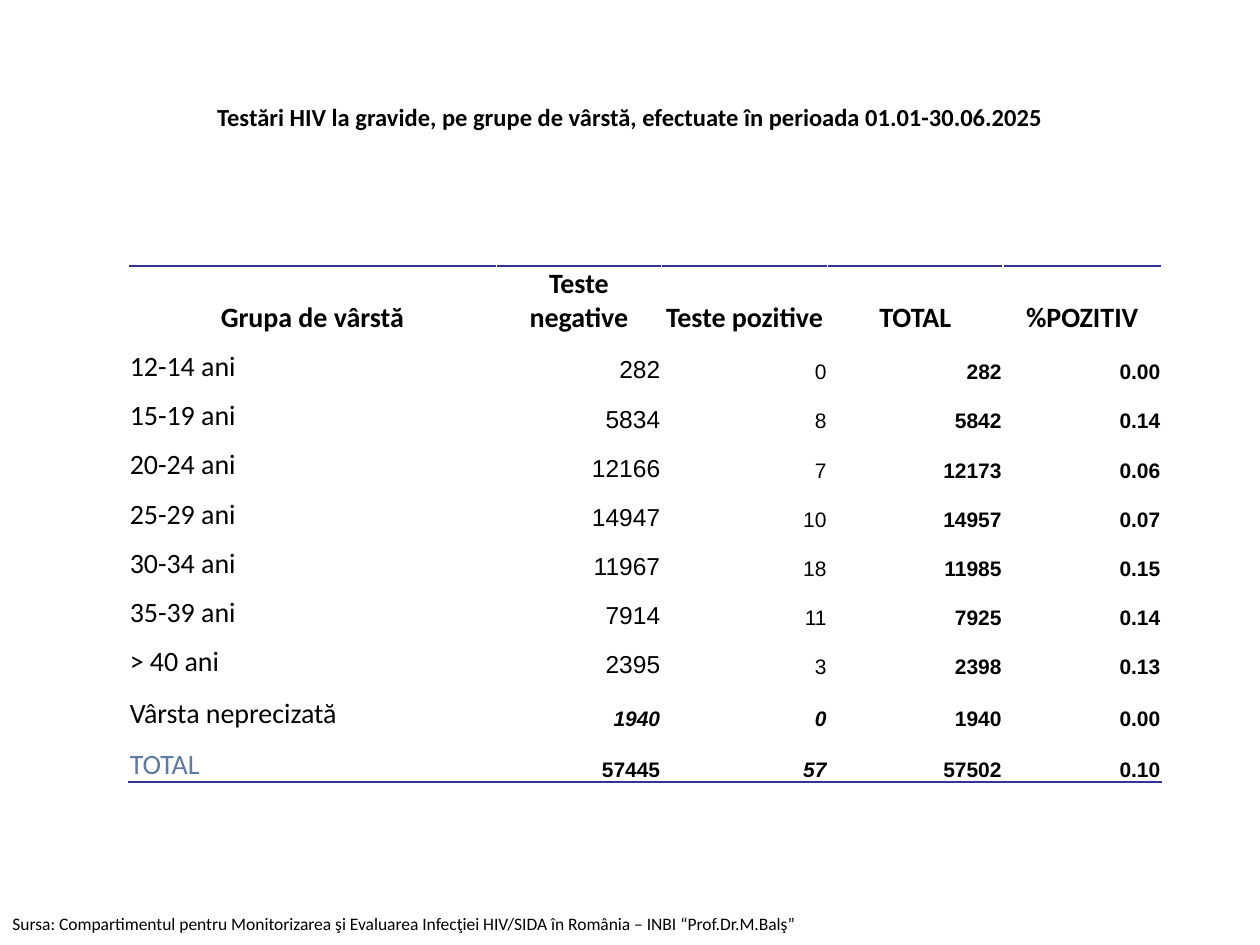
from pptx import Presentation
from pptx.dml.color import RGBColor
from pptx.enum.text import MSO_ANCHOR, PP_ALIGN
from pptx.oxml import parse_xml
from pptx.oxml.ns import nsdecls
from pptx.util import Inches, Pt

COLORS = {"text": "000000", "total": "5E7AA2", "rule": "333399"}

presentation = Presentation()
presentation.slide_width = Inches(10)
presentation.slide_height = Inches(7.5)
slide = presentation.slides.add_slide(presentation.slide_layouts[6])
unit = presentation.slide_width / 100


def write(frame, text, size, font="Calibri", color="text", bold=False, italic=False,
          align=PP_ALIGN.LEFT):
    paragraph = frame.paragraphs[0]
    paragraph.alignment = align
    run = paragraph.add_run()
    run.text = text
    run.font.size = Pt(size)
    run.font.name = font
    run.font.bold = bold
    run.font.italic = italic
    run.font.color.rgb = RGBColor.from_string(COLORS[color])


def add_rule(cell, side):
    cell._tc.get_or_add_tcPr().insert(0, parse_xml(
        f'<a:{side} {nsdecls("a")} w="{Pt(1)}"><a:solidFill>'
        f'<a:srgbClr val="{COLORS["rule"]}"/></a:solidFill></a:{side}>'))


source = slide.shapes.add_textbox(0, int(72 * unit), int(67.1 * unit), int(2.7 * unit))
source.text_frame.word_wrap = False
write(source.text_frame,
      "Sursa: Compartimentul pentru Monitorizarea şi Evaluarea Infecţiei HIV/SIDA în România"
      " – INBI “Prof.Dr.M.Balş”", size=10)

title = slide.shapes.add_textbox(int(5 * unit), int(3 * unit), int(90 * unit), int(12.5 * unit))
title.text_frame.word_wrap = True
title.text_frame.vertical_anchor = MSO_ANCHOR.MIDDLE
write(title.text_frame,
      "Testări HIV la gravide, pe grupe de vârstă, efectuate în perioada 01.01-30.06.2025",
      size=14, bold=True, align=PP_ALIGN.CENTER)

headings = ["Grupa de vârstă", "Teste negative", "Teste pozitive", "TOTAL", "%POZITIV"]
tests = [
    ("12-14 ani", 282, 0),
    ("15-19 ani", 5834, 8),
    ("20-24 ani", 12166, 7),
    ("25-29 ani", 14947, 10),
    ("30-34 ani", 11967, 18),
    ("35-39 ani", 7914, 11),
    ("> 40 ani", 2395, 3),
    ("Vârsta neprecizată", 1940, 0),
]
tests.append(("TOTAL", sum(row[1] for row in tests), sum(row[2] for row in tests)))
rows = [headings]
for group, negative, positive in tests:
    total = negative + positive
    rows.append([group, str(negative), str(positive), str(total), f"{100 * positive / total:.2f}"])

column_widths = [29.2, 13.1, 13.2, 13.9, 12.6]
row_heights = [5.5] + [3.9] * 7 + [4.1] * 2
last = len(rows) - 1
unspecified = last - 1

table = slide.shapes.add_table(
    len(rows), len(headings), int(10.2 * unit), int(21.1 * unit),
    int(sum(column_widths) * unit), int(sum(row_heights) * unit)).table
table.first_row = False
table.horz_banding = False
for column, width in zip(table.columns, column_widths):
    column.width = int(width * unit)
for row, height in zip(table.rows, row_heights):
    row.height = int(height * unit)

for row_index, values in enumerate(rows):
    for column_index, value in enumerate(values):
        cell = table.cell(row_index, column_index)
        cell.fill.background()
        cell.vertical_anchor = MSO_ANCHOR.BOTTOM
        cell.margin_left = cell.margin_right = cell.margin_top = Inches(0.01)
        cell.margin_bottom = 0
        if row_index == 0:
            add_rule(cell, "lnT")
            write(cell.text_frame, value, size=16, bold=True, align=PP_ALIGN.CENTER)
            continue
        if row_index == last:
            add_rule(cell, "lnB")
        if column_index == 0:
            write(cell.text_frame, value, size=16,
                  color="total" if row_index == last else "text")
        else:
            summary = row_index >= unspecified
            write(cell.text_frame, value, font="Arial", align=PP_ALIGN.RIGHT,
                  size=14 if column_index == 1 and not summary else 12,
                  bold=summary or column_index >= 3,
                  italic=(row_index, column_index) in
                  [(unspecified, 1), (unspecified, 2), (last, 2)])

presentation.save("out.pptx")
